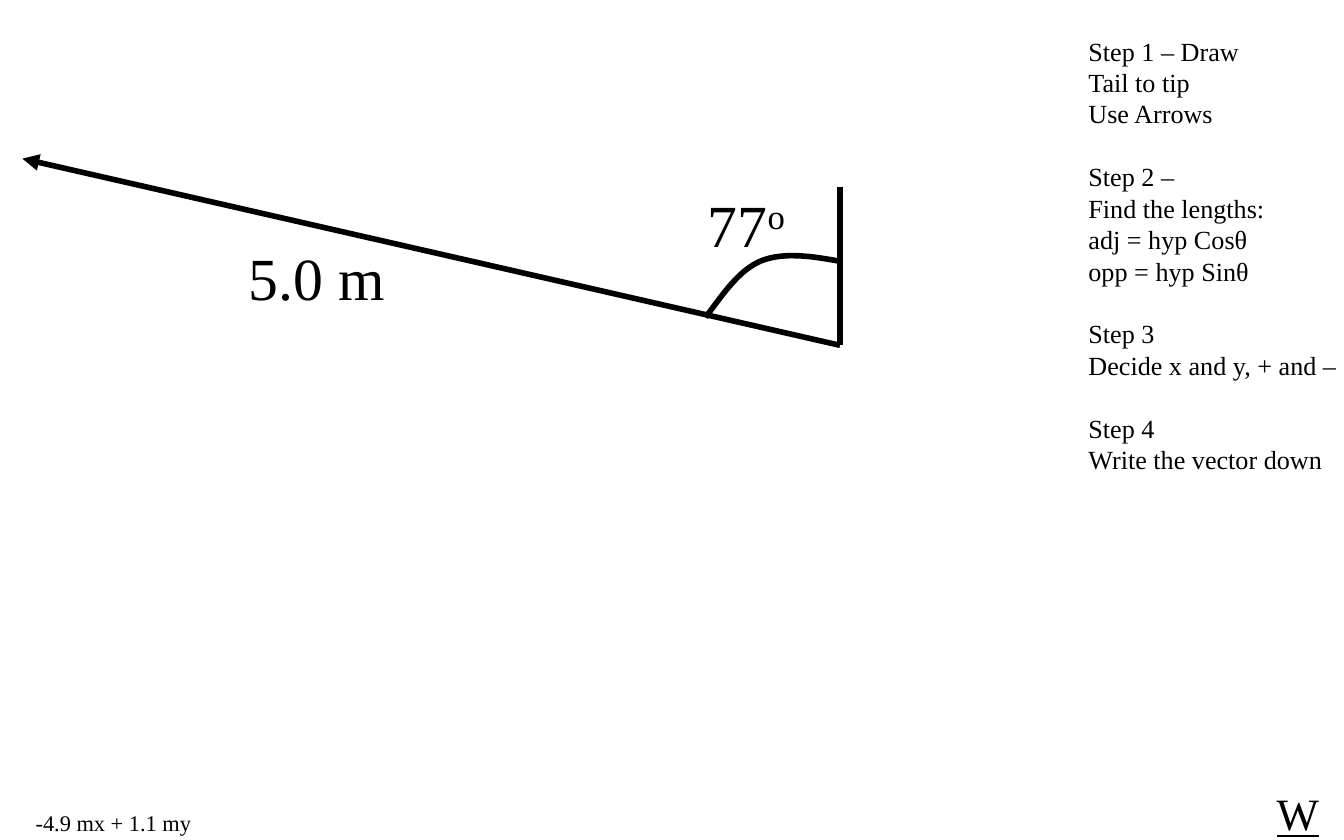
"""Build a slide that resolves a vector into its components."""
from lxml.etree import SubElement
from pptx import Presentation
from pptx.dml.color import RGBColor
from pptx.enum.shapes import MSO_CONNECTOR
from pptx.enum.text import MSO_AUTO_SIZE
from pptx.oxml.ns import qn
from pptx.util import Pt

STEPS = [
    ["Step 1 – Draw", "Tail to tip", "Use Arrows"],
    ["Step 2 –", "Find the lengths:", "adj = hyp Cosθ", "opp = hyp Sinθ"],
    ["Step 3", "Decide x and y, + and –"],
    ["Step 4", "Write the vector down"],
]
VERTEX = (450, 185)
ARC = [
    [(378, 170), (387.5, 157.5), (396, 144.5), (408, 139.7)],
    [(408, 139.7), (420, 135), (435, 137.3), (450, 140)],
]


def color(value):
    """Return the colour for a hex string."""
    return RGBColor.from_string(value)


def bezier(points, steps=16):
    """Return points along a cubic curve."""
    result = []
    for step in range(steps + 1):
        t = step / steps
        weights = ((1 - t) ** 3, 3 * t * (1 - t) ** 2, 3 * t**2 * (1 - t), t**3)
        result.append(tuple(sum(w * p[axis] for w, p in zip(weights, points)) for axis in (0, 1)))
    return result


def add_run(paragraph, text, size=14, font="Times New Roman", ink="000000", underline=None, baseline=None):
    """Add formatted text to a paragraph."""
    run = paragraph.add_run()
    run.text = text
    run.font.name = font
    run.font.size = Pt(size)
    run.font.color.rgb = color(ink)
    run.font.underline = underline
    if baseline:
        run.font._element.set("baseline", str(baseline * 1000))
    return run


class VectorSlide:
    """Hold the line style and the current slide."""

    ink = "000000"
    line_width = 3

    def __init__(self, slide):
        """Keep the slide to draw on."""
        self.slide = slide

    def text_box(self, left, top, width, height):
        """Add an unwrapped text box and return its text frame."""
        shape = self.slide.shapes.add_textbox(Pt(left), Pt(top), Pt(width), Pt(height))
        shape.text_frame.word_wrap = False
        shape.text_frame.auto_size = MSO_AUTO_SIZE.SHAPE_TO_FIT_TEXT
        return shape.text_frame

    def label(self, text, left, top, width, height, superscript=None, **style):
        """Add a one-line label."""
        paragraph = self.text_box(left, top, width, height).paragraphs[0]
        add_run(paragraph, text, **style)
        if superscript:
            add_run(paragraph, superscript, baseline=30, **style)

    def step_list(self, groups, left, top, width, height, pitch=16.85):
        """Add groups of lines with one line of space between groups."""
        frame = self.text_box(left, top, width, height)
        for group_index, group in enumerate(groups):
            for line_index, text in enumerate(group):
                is_first = group_index == line_index == 0
                paragraph = frame.paragraphs[0] if is_first else frame.add_paragraph()
                paragraph.line_spacing = Pt(pitch)
                if group_index and not line_index:
                    paragraph.space_before = Pt(pitch)
                add_run(paragraph, text)

    def stroke(self, line):
        """Apply the line style."""
        line.color.rgb = color(self.ink)
        line.width = Pt(self.line_width)

    def line(self, start, end, arrow=False):
        """Add a straight line, with an arrowhead at its end if asked."""
        points = [Pt(value) for value in (*start, *end)]
        connector = self.slide.shapes.add_connector(MSO_CONNECTOR.STRAIGHT, *points)
        self.stroke(connector.line)
        properties = connector._element.spPr
        if arrow:
            SubElement(properties.find(qn("a:ln")), qn("a:tailEnd"), type="triangle")
        SubElement(properties, qn("a:effectLst"))

    def curve(self, segments):
        """Add an open outline through cubic segments."""
        points = [(Pt(x), Pt(y)) for segment in segments for x, y in bezier(segment)]
        builder = self.slide.shapes.build_freeform(*points[0])
        builder.add_line_segments(points[1:], close=False)
        shape = builder.convert_to_shape()
        shape.shadow.inherit = False
        shape.fill.background()
        self.stroke(shape.line)


def main():
    """Build and save the presentation."""
    presentation = Presentation()
    presentation.slide_width, presentation.slide_height = Pt(720), Pt(450)
    slide = VectorSlide(presentation.slides.add_slide(presentation.slide_layouts[6]))
    slide.label("-4.9 mx + 1.1 my", 12, 430, 99, 21.6, size=12)
    slide.label("W", 676.8, 417.6, 37.4, 36, size=24, underline=True)
    slide.label("5.0 m", 126, 125.3, 87.8, 46, size=32)
    slide.label("77", 372.2, 97.2, 57.6, 46, superscript="o", size=32)
    slide.line((450, 100), VERTEX)
    slide.line(VERTEX, (12, 85), arrow=True)
    slide.curve(ARC)
    slide.step_list(STEPS, 576, 15.1, 149.8, 262)
    presentation.save("out.pptx")


if __name__ == "__main__":
    main()
